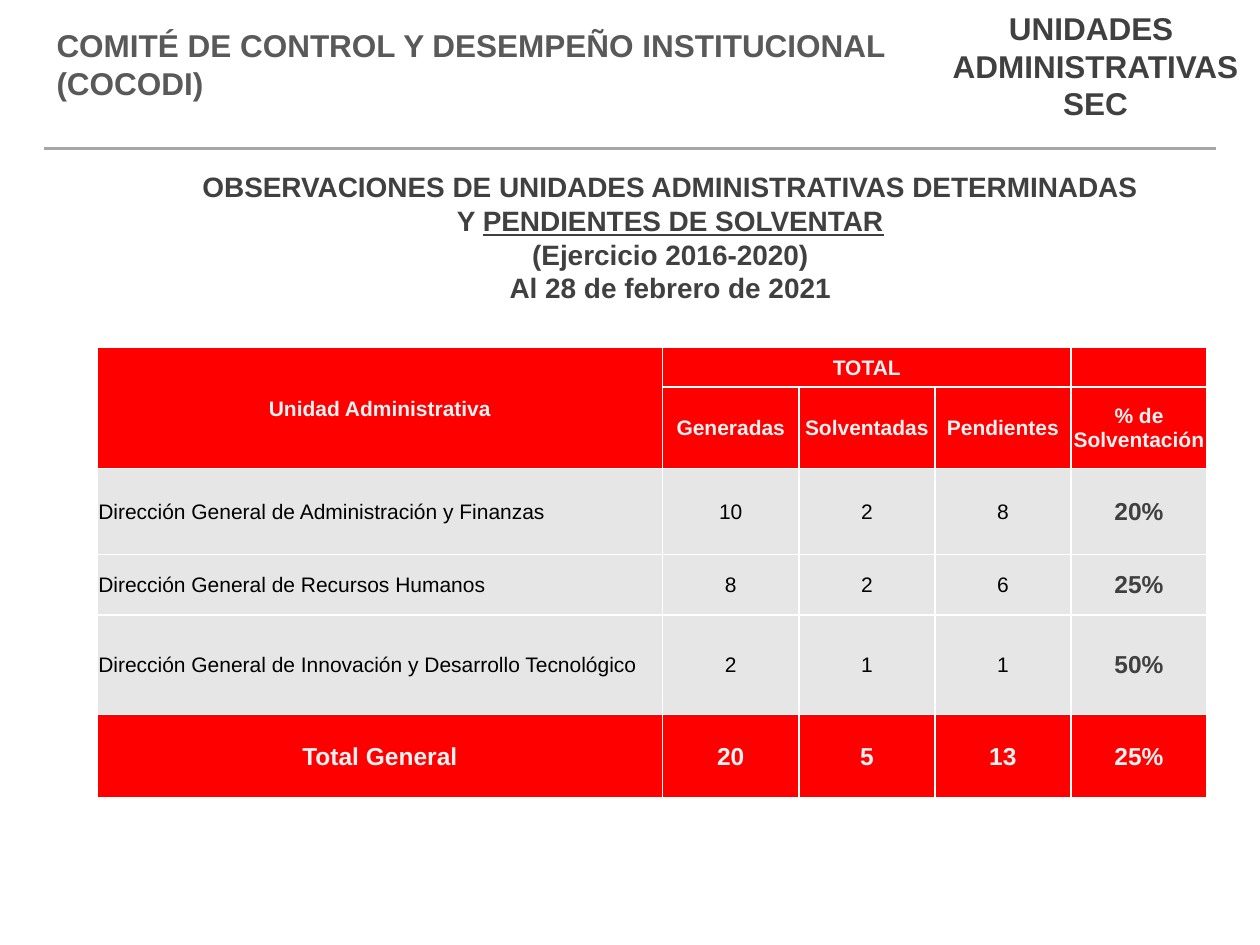
from lxml.etree import SubElement
from pptx import Presentation
from pptx.dml.color import RGBColor
from pptx.enum.shapes import MSO_CONNECTOR as Connector
from pptx.enum.text import MSO_ANCHOR as Anchor, MSO_AUTO_SIZE as AutoSize, PP_ALIGN as Align
from pptx.oxml import parse_xml
from pptx.oxml.ns import nsdecls, qn
from pptx.util import Inches, Pt

# The slide is a grid of 1000 columns by 750 rows.
WIDTH, HEIGHT = Inches(10), Inches(7.5)
COLUMNS, ROWS = 1000, 750

FONT = "Arial"
RED, GREY, WHITE, BLACK = "FF0000", "E7E6E6", "FFFFFF", "000000"
PALE, DARK, MEDIUM, RULE = "F2F2F2", "404040", "595959", "A6A6A6"

COLUMN_SPANS = [449] + [108] * 4
ROW_SPANS = [31, 65, 68, 48, 79, 66]
HEADINGS = [
    ["Unidad Administrativa", "TOTAL", "", "", ""],
    ["", "Generadas", "Solventadas", "Pendientes", "% de Solventación"],
]
UNITS = [
    ["Dirección General de Administración y Finanzas", "10", "2", "8", "20%"],
    ["Dirección General de Recursos Humanos", "8", "2", "6", "25%"],
    ["Dirección General de Innovación y Desarrollo Tecnológico", "2", "1", "1", "50%"],
]
TOTALS = ["Total General", "20", "5", "13", "25%"]


def across(columns):
    return round(WIDTH * columns / COLUMNS)


def down(rows):
    return round(HEIGHT * rows / ROWS)


def place(left, top, width, height):
    return across(left), down(top), across(width), down(height)


def color(hex_string):
    return RGBColor.from_string(hex_string)


def add_span(para, text, size, tint, bold=True, underline=None):
    span = para.add_run()
    span.text = text
    font = span.font
    font.name, font.size, font.bold = FONT, Pt(size), bold
    font.underline = underline
    font.color.rgb = color(tint)


def add_text(page, area, lines, size, tint, align=Align.CENTER):
    """Add a text box; each line is a list of (text, underline) pairs."""
    box = page.shapes.add_textbox(*place(*area))
    frame = box.text_frame
    frame.word_wrap = True
    frame.auto_size = AutoSize.SHAPE_TO_FIT_TEXT
    for index, line in enumerate(lines):
        para = frame.add_paragraph() if index else frame.paragraphs[0]
        para.alignment = align
        for text, underline in line:
            add_span(para, text, size, tint, underline=underline)


def add_rule(page, left, right, row):
    rule = page.shapes.add_connector(
        Connector.STRAIGHT, across(left), down(row), across(right), down(row))
    rule.line.color.rgb = color(RULE)
    rule.line.width = Pt(1.5)
    SubElement(rule._element.spPr, qn("a:effectLst"))


def add_borders(cell):
    properties = cell._tc.get_or_add_tcPr()
    for index, side in enumerate(("lnL", "lnR", "lnT", "lnB")):
        properties.insert(index, parse_xml(
            f'<a:{side} {nsdecls("a")} w="{Pt(1)}"><a:solidFill>'
            f'<a:srgbClr val="{WHITE}"/></a:solidFill></a:{side}>'))


def fill_cell(cell, text, fill, size, tint, bold=True, align=Align.CENTER):
    cell.fill.solid()
    cell.fill.fore_color.rgb = color(fill)
    add_borders(cell)
    cell.vertical_anchor = Anchor.MIDDLE
    cell.margin_left = cell.margin_right = cell.margin_top = across(1)
    cell.margin_bottom = 0
    if text:
        para = cell.text_frame.paragraphs[0]
        para.alignment = align
        add_span(para, text, size, tint, bold)


def add_unit_table(page):
    area = place(77, 276, sum(COLUMN_SPANS), sum(ROW_SPANS))
    table = page.shapes.add_table(len(ROW_SPANS), len(COLUMN_SPANS), *area).table
    for column, width in zip(table.columns, COLUMN_SPANS):
        column.width = across(width)
    for row, height in zip(table.rows, ROW_SPANS):
        row.height = down(height)

    last_row, last_column = len(ROW_SPANS) - 1, len(COLUMN_SPANS) - 1
    for r, texts in enumerate(HEADINGS + UNITS + [TOTALS]):
        for c, text in enumerate(texts):
            cell = table.cell(r, c)
            if r < len(HEADINGS):
                fill_cell(cell, text, RED, 12, PALE)
            elif r == last_row:
                fill_cell(cell, text, RED, 14, PALE)
            elif c == last_column:
                fill_cell(cell, text, GREY, 14, DARK)
            else:
                align = Align.CENTER if c else Align.LEFT
                fill_cell(cell, text, GREY, 12, BLACK, False, align)
    table.cell(0, 0).merge(table.cell(1, 0))
    table.cell(0, 1).merge(table.cell(0, 3))


def main():
    deck = Presentation()
    deck.slide_width, deck.slide_height = WIDTH, HEIGHT
    page = deck.slides.add_slide(deck.slide_layouts[6])

    add_text(page, (144, 130, 776, 118), [
        [("OBSERVACIONES DE UNIDADES ADMINISTRATIVAS DETERMINADAS", None)],
        [("Y ", None), ("PENDIENTES DE SOLVENTAR", True)],
        [("(Ejercicio 2016-2020)", None)],
        [("Al 28 de febrero de 2021", None)],
    ], 16, DARK)
    add_text(page, (738, 2, 263, 101), [
        [("UNIDADES ", None)], [("ADMINISTRATIVAS", None)], [("SEC", None)],
    ], 18, DARK)
    add_text(page, (35, 16, 702, 71), [
        [("COMITÉ DE CONTROL Y DESEMPEÑO INSTITUCIONAL (COCODI)", None)],
    ], 18, MEDIUM, Align.LEFT)
    add_rule(page, 35, 965, 118)
    add_unit_table(page)

    deck.save("out.pptx")


if __name__ == "__main__":
    main()
